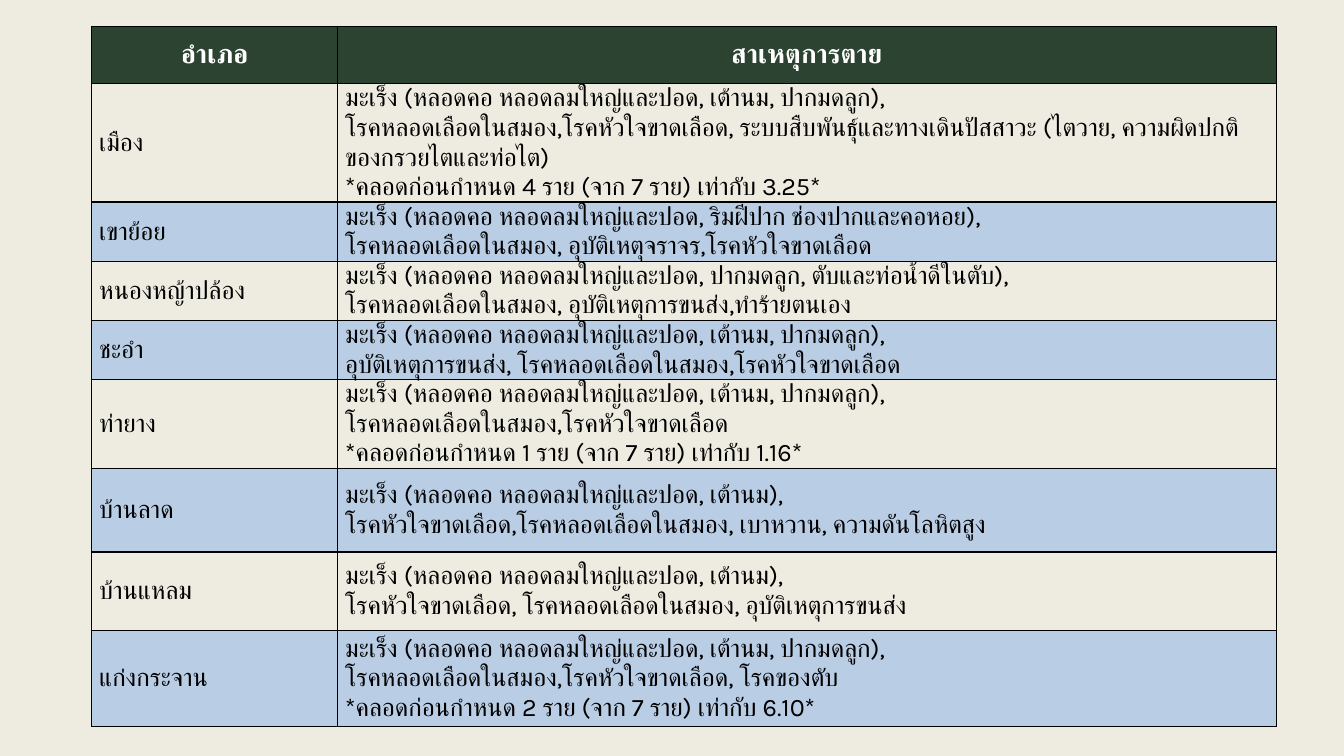
from lxml.etree import SubElement
from pptx import Presentation
from pptx.dml.color import RGBColor
from pptx.enum.text import MSO_ANCHOR as Anchor, PP_ALIGN as Align
from pptx.oxml.ns import qn
from pptx.util import Cm, Pt

COLORS = {
    "background": "EEECE1",
    "header": "2D4331",
    "band": "B9CDE5",
    "white": "FFFFFF",
    "black": "000000",
}
FONT = "Karla"
COLUMN_WIDTHS = [6.2, 23.65]
ROW_HEIGHTS = [1.45, 1.42, 0.84, 1.14, 1.19, 1.85, 2.11, 1.98, 2.41]
HEADER = ("อำเภอ", ["สาเหตุการตาย"])
LUNG = "มะเร็ง (หลอดคอ หลอดลมใหญ่และปอด, "
BREAST = LUNG + "เต้านม), \n"
BREAST_CERVIX = LUNG + "เต้านม, ปากมดลูก), \n"
STROKE_HEART = "โรคหลอดเลือดในสมอง,โรคหัวใจขาดเลือด"


def preterm(cases, rate):
    return f"*คลอดก่อนกำหนด {cases} ราย (จาก 7 ราย) เท่ากับ {rate}*"


DISTRICTS = [
    ("เมือง", [
        BREAST_CERVIX + STROKE_HEART
        + ", ระบบสืบพันธุ์และทางเดินปัสสาวะ (ไตวาย, ความผิดปกติของกรวยไตและท่อไต)",
        preterm(4, "3.25")]),
    ("เขาย้อย", [
        LUNG + "ริมฝีปาก ช่องปากและคอหอย), \n"
        "โรคหลอดเลือดในสมอง, อุบัติเหตุจราจร,โรคหัวใจขาดเลือด"]),
    ("หนองหญ้าปล้อง", [
        LUNG + "ปากมดลูก, ตับและท่อน้ำดีในตับ), \n"
        "โรคหลอดเลือดในสมอง, อุบัติเหตุการขนส่ง,ทำร้ายตนเอง"]),
    ("ชะอำ", [BREAST_CERVIX + "อุบัติเหตุการขนส่ง, " + STROKE_HEART]),
    ("ท่ายาง", [BREAST_CERVIX + STROKE_HEART, preterm(1, "1.16")]),
    ("บ้านลาด", [
        BREAST + "โรคหัวใจขาดเลือด,โรคหลอดเลือดในสมอง, เบาหวาน, ความดันโลหิตสูง"]),
    ("บ้านแหลม", [
        BREAST + "โรคหัวใจขาดเลือด, โรคหลอดเลือดในสมอง, อุบัติเหตุการขนส่ง"]),
    ("แก่งกระจาน", [
        BREAST_CERVIX + STROKE_HEART + ", โรคของตับ", preterm(2, "6.10")]),
]


class SlideBuilder:
    def __init__(self, slide):
        self.slide = slide
        fill = slide.background.fill
        fill.solid()
        fill.fore_color.rgb = self.color("background")

    def color(self, name):
        return RGBColor.from_string(COLORS[name])

    def add_run(self, paragraph, text, size, color, bold):
        run = paragraph.add_run()
        run.text = text
        font = run.font
        font.name, font.size, font.bold = FONT, Pt(size), bold
        font.color.rgb = self.color(color)
        SubElement(run._r.get_or_add_rPr(), qn("a:cs"), typeface=FONT)

    def add_borders(self, cell):
        properties = cell._tc.get_or_add_tcPr()
        for position, side in enumerate(("lnL", "lnR", "lnT", "lnB")):
            line = SubElement(properties, qn(f"a:{side}"), w=str(Pt(1)))
            fill = SubElement(line, qn("a:solidFill"))
            SubElement(fill, qn("a:srgbClr"), val=COLORS["black"])
            properties.insert(position, line)

    def fill_cell(self, cell, paragraphs, fill=None, size=18, color="black",
                  bold=False, align=Align.LEFT):
        cell.vertical_anchor = Anchor.MIDDLE
        cell.margin_left = cell.margin_right = Cm(0.19)
        cell.margin_top = cell.margin_bottom = 0
        if fill:
            cell.fill.solid()
            cell.fill.fore_color.rgb = self.color(fill)
        else:
            cell.fill.background()
        self.add_borders(cell)
        frame = cell.text_frame
        for index, text in enumerate(paragraphs):
            paragraph = frame.add_paragraph() if index else frame.paragraphs[0]
            paragraph.alignment = align
            for number, line in enumerate(text.split("\n")):
                if number:
                    paragraph.add_line_break()
                self.add_run(paragraph, line, size, color, bold)

    def add_table(self, left, top, height, header, rows):
        shape = self.slide.shapes.add_table(
            len(rows) + 1, len(COLUMN_WIDTHS), Cm(left), Cm(top),
            Cm(sum(COLUMN_WIDTHS)), Cm(height))
        table = shape.table
        table.first_row = table.horz_banding = False
        for column, width in zip(table.columns, COLUMN_WIDTHS):
            column.width = Cm(width)
        for row, row_height in zip(table.rows, ROW_HEIGHTS):
            row.height = Cm(row_height)
        shape.height = Cm(height)
        for index, (district, causes) in enumerate([header] + rows):
            if index == 0:
                style = dict(fill="header", size=19, color="white",
                             bold=True, align=Align.CENTER)
            else:
                style = dict(fill=None if index % 2 else "band")
            self.fill_cell(table.cell(index, 0), [district], **style)
            self.fill_cell(table.cell(index, 1), causes, **style)


def main():
    presentation = Presentation()
    presentation.slide_width = Cm(33.87)
    presentation.slide_height = Cm(19.05)
    slide = presentation.slides.add_slide(presentation.slide_layouts[6])
    builder = SlideBuilder(slide)
    builder.add_table(2.31, 0.66, 17.86, HEADER, DISTRICTS)
    presentation.save("out.pptx")


if __name__ == "__main__":
    main()
